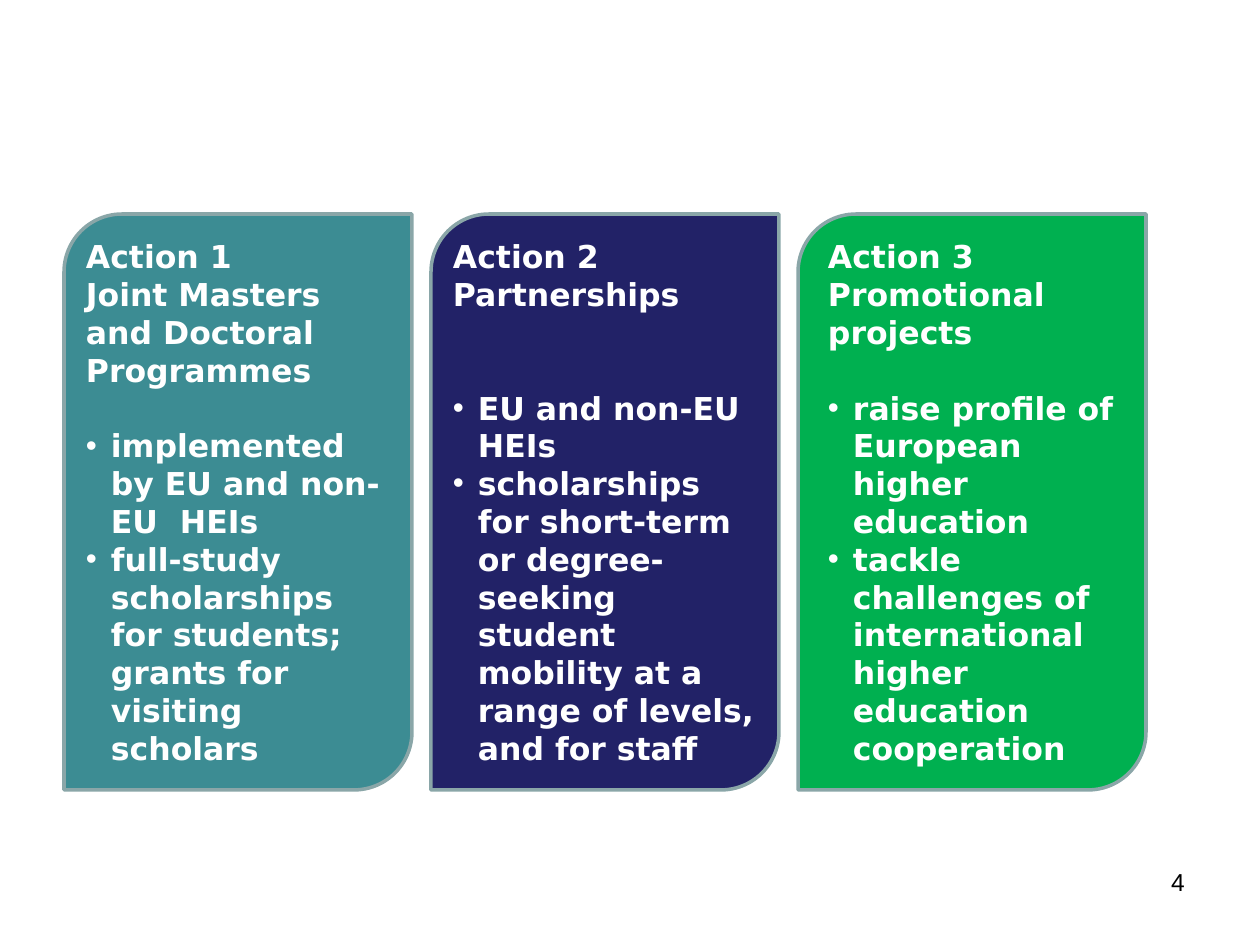
from lxml.etree import SubElement
from pptx import Presentation
from pptx.dml.color import RGBColor
from pptx.enum.shapes import MSO_SHAPE as SHAPE
from pptx.enum.text import MSO_ANCHOR as ANCHOR, PP_ALIGN as ALIGN
from pptx.oxml.ns import qn
from pptx.util import Emu, Pt


def px(n):
    return Emu(round(n * 914400 / 126))


def write(p, text, size=18, font="DejaVu Sans", color="FFFFFF", bold=True,
          align=ALIGN.LEFT, bullet=False, before=0, spacing=None):
    if bullet:
        pPr = p._p.get_or_add_pPr()
        pPr.set("marL", str(px(25)))
        pPr.set("indent", str(-px(25)))
        SubElement(pPr, qn("a:buFont")).set("typeface", "Arial")
        SubElement(pPr, qn("a:buChar")).set("char", "•")
    p.alignment = align
    if before:
        p.space_before = Pt(before)
    if spacing:
        p.line_spacing = Pt(spacing)
    r = p.add_run()
    r.text = text
    r.font.size = Pt(size)
    r.font.name = font
    r.font.bold = bold
    r.font.color.rgb = RGBColor.from_string(color)


LINE = 21.6  # line pitch in points
# fill, side inset in px, heading, lines left open under the heading, bullets
ACTIONS = [
    ("3C8C93", 5, ["Action 1", "Joint Masters and Doctoral Programmes"], 1,
     ["implemented by EU and non-EU  HEIs",
      "full-study scholarships for students; grants for visiting scholars"]),
    ("222267", 5, ["Action 2", "Partnerships"], 2,
     ["EU and non-EU HEIs",
      "scholarships for short-term or degree-seeking student mobility "
      "at a range of levels, and for staff"]),
    ("00B050", 13, ["Action 3", "Promotional projects"], 1,
     ["raise profile of European higher education",
      "tackle challenges of international higher education cooperation"]),
]

prs = Presentation()
prs.slide_width, prs.slide_height = px(1260), px(945)
s = prs.slides.add_slide(prs.slide_layouts[6])

number = s.shapes.add_textbox(px(903), px(861), px(294), px(65))
number.text_frame.word_wrap = True
write(number.text_frame.paragraphs[0], "4", size=14, font="Arial",
      color="000000", bold=False, align=ALIGN.RIGHT)

for i, (fill, inset, heading, gap, bullets) in enumerate(ACTIONS):
    sp = s.shapes.add_shape(SHAPE.ROUND_2_DIAG_RECTANGLE,
                            px(64 + 367 * i), px(214), px(348), px(576))
    sp.shadow.inherit = False
    sp.fill.solid()
    sp.fill.fore_color.rgb = RGBColor.from_string(fill)
    sp.line.color.rgb = RGBColor.from_string("8AA6A8")
    sp.line.width = Pt(2)
    tf = sp.text_frame
    tf.word_wrap = True
    tf.vertical_anchor = ANCHOR.MIDDLE
    tf.margin_left = tf.margin_right = px(inset)
    tf.margin_top = tf.margin_bottom = px(6)
    write(tf.paragraphs[0], heading[0], spacing=LINE)
    write(tf.add_paragraph(), heading[1], spacing=LINE)
    for j, text in enumerate(bullets):
        write(tf.add_paragraph(), text, bullet=True, spacing=LINE,
              before=0 if j else gap * LINE)

prs.save("out.pptx")
